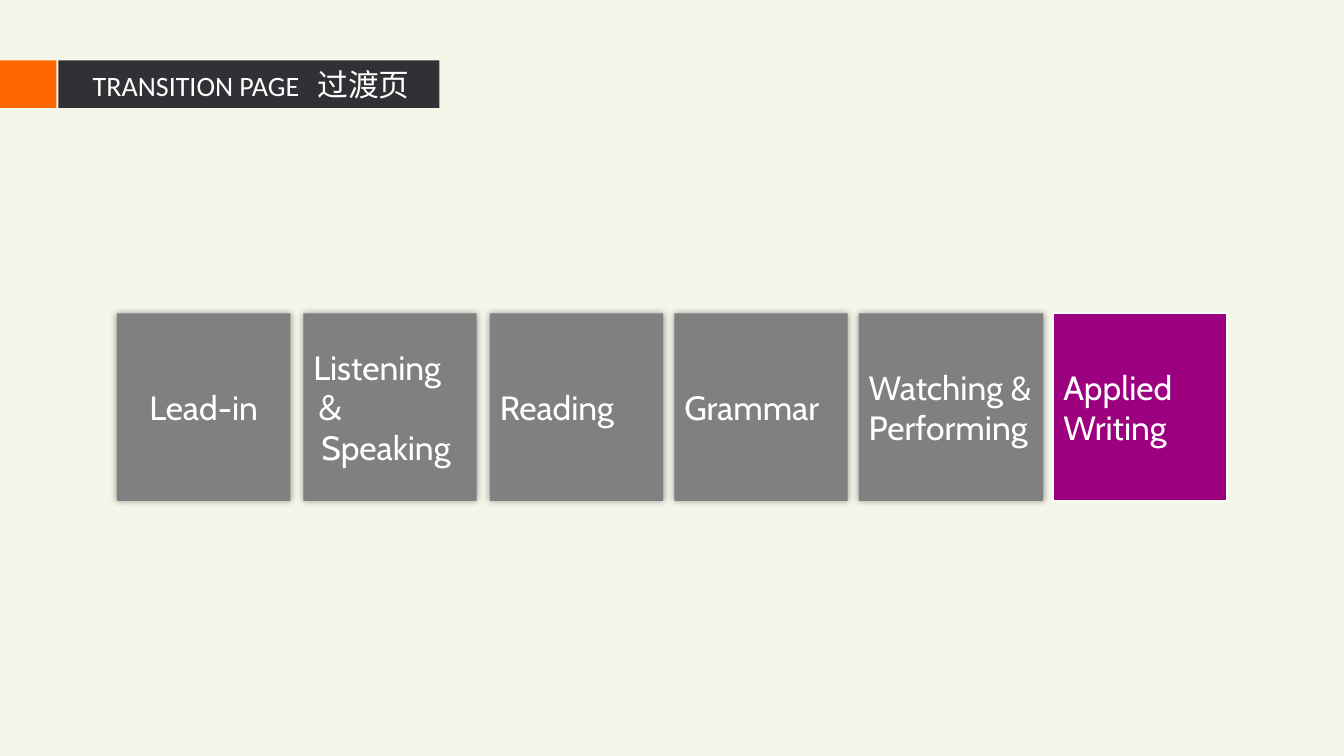
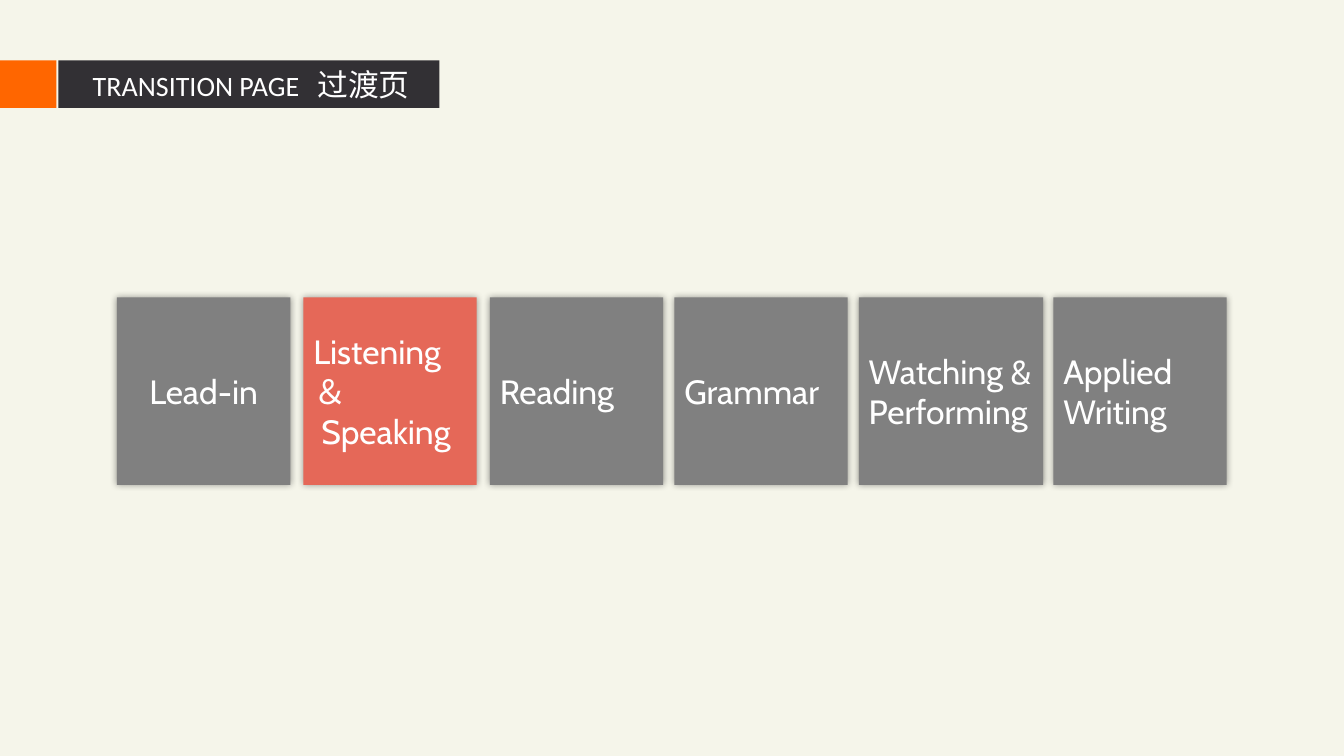
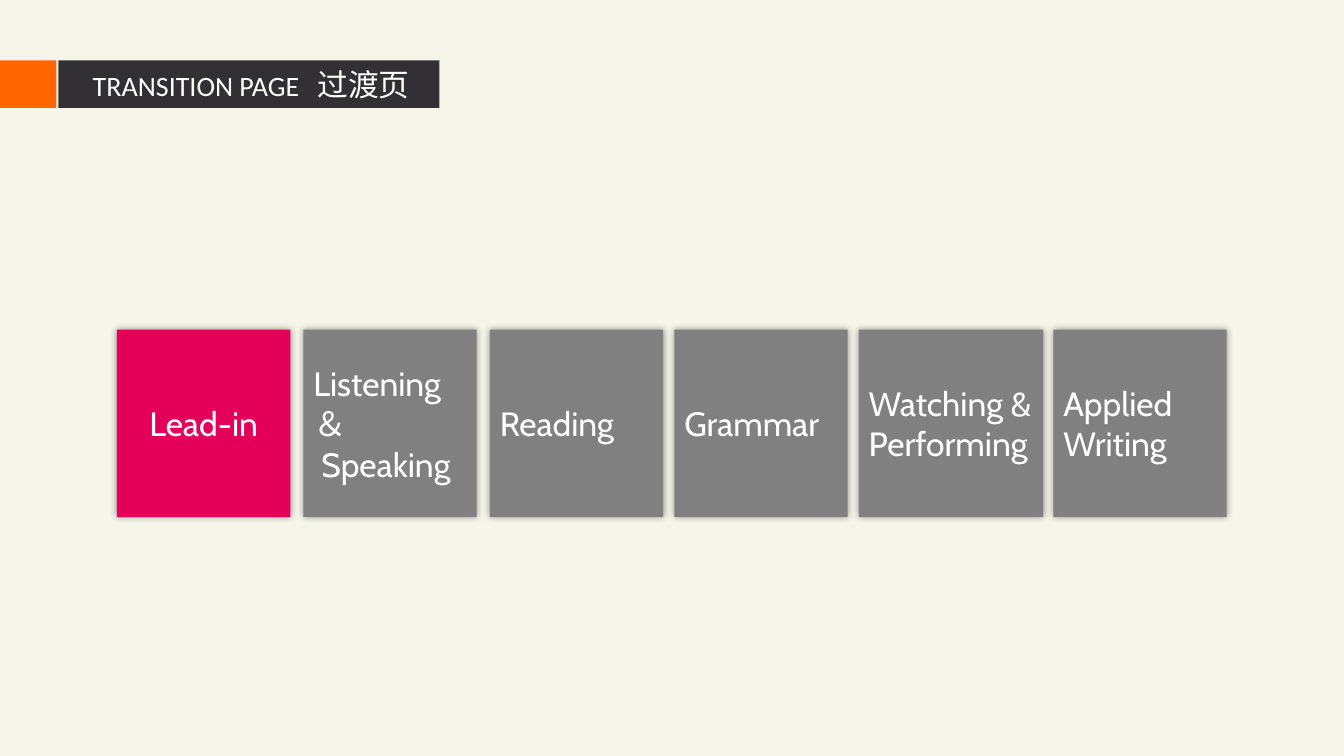
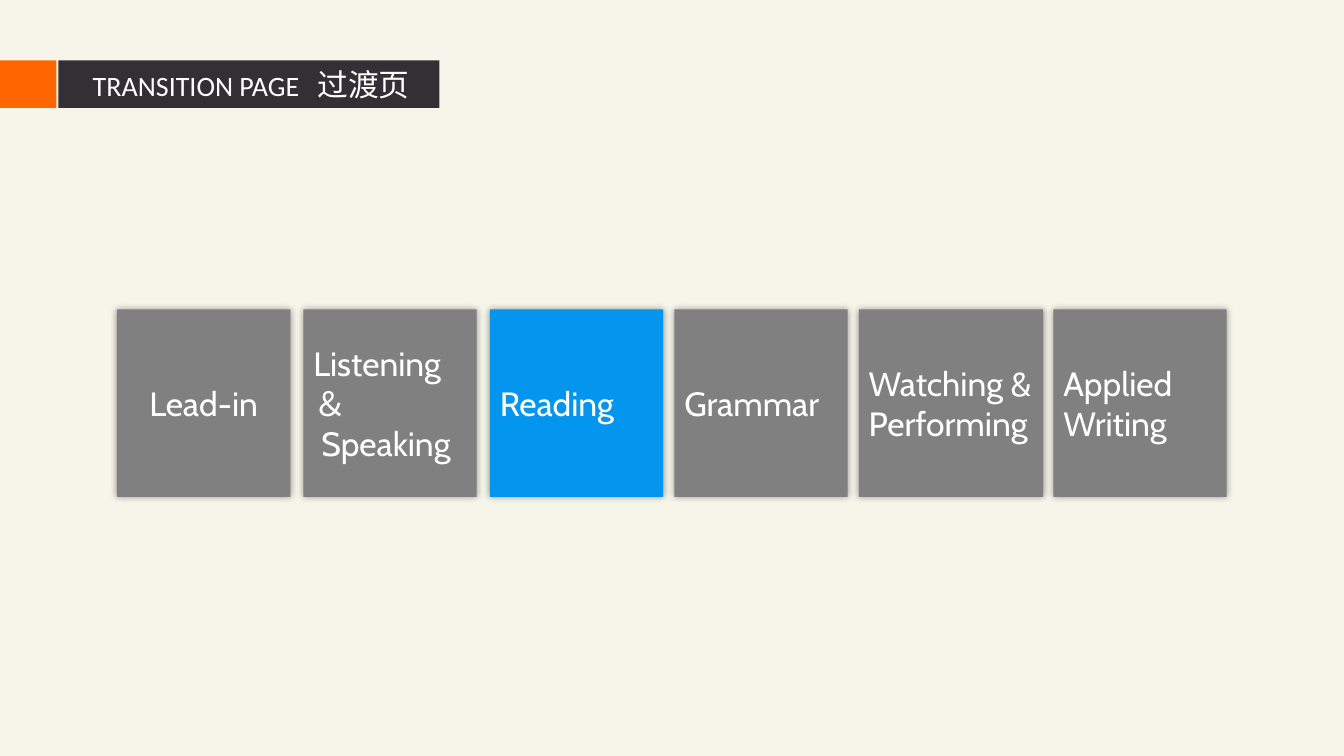
from dataclasses import dataclass
from itertools import accumulate

from lxml import etree
from pptx import Presentation
from pptx.dml.color import RGBColor
from pptx.enum import shapes, text
from pptx.oxml import ns
from pptx.util import Inches, Pt


@dataclass(frozen=True)
class Theme:
    background: str = "F5F5EA"
    band: str = "323034"
    marker: str = "FF6600"
    inactive: str = "808080"
    light: str = "FFFFFF"
    shadow: str = "000000"
    tile_font: str = "Cabin"
    latin_font: str = "Calibri"
    chinese_font: str = "Noto Sans CJK SC"
    tile_size: int = 24
    title_size: int = 20
    chinese_size: int = 22


@dataclass(frozen=True)
class Section:
    lines: tuple
    step: float  # columns to the left edge of the next tile
    width: float = 10.32
    centered: bool = False


# The slide is a grid of 80 columns by 45 rows
COLUMNS, ROWS = 80, 45
CELL = Inches(7.5) / ROWS

SECTIONS = (
    Section(("Lead-in",), 11.1, centered=True),
    Section(("Listening ＆", "Speaking"), 11.1),
    Section(("Reading",), 10.98),
    Section(("Grammar",), 10.98),
    Section(("Watching & Performing",), 11.58, width=10.98),
    Section(("Applied Writing",), 0),
)
FIRST_COLUMN = 6.96
TILE_ROWS = 11.16

# Highlighted section, its colour, top row of the tiles, whether it is outlined
PAGES = (
    (5, "9C007F", 18.66, True),
    (1, "E56858", 17.7, False),
    (0, "E40059", 19.62, False),
    (2, "0495EE", 18.42, False),
)


def cells(count):
    return round(count * CELL)


def add_element(parent, tag, **attributes):
    return etree.SubElement(parent, ns.qn(tag), attributes)


class Deck:
    def __init__(self, theme):
        self.theme = theme
        self.presentation = Presentation()
        self.presentation.slide_width = cells(COLUMNS)
        self.presentation.slide_height = cells(ROWS)
        fill = self.presentation.slide_master.background.fill
        fill.solid()
        fill.fore_color.rgb = RGBColor.from_string(theme.background)
        self.slide = None

    def new_slide(self):
        self.slide = self.presentation.slides.add_slide(
            self.presentation.slide_layouts[6])

    def style_font(self, font, name, size):
        font.name = name
        font.size = Pt(size)
        font.color.rgb = RGBColor.from_string(self.theme.light)
        add_element(font._element, "a:ea", typeface=name)

    def rectangle(self, column, row, width, height, color):
        shape = self.slide.shapes.add_shape(
            shapes.MSO_SHAPE.RECTANGLE,
            cells(column), cells(row), cells(width), cells(height))
        shape.fill.solid()
        shape.fill.fore_color.rgb = RGBColor.from_string(color)
        shape.line.fill.background()
        shape.shadow.inherit = False
        return shape

    def soft_shadow(self, shape):
        effects = shape._element.spPr.find(ns.qn("a:effectLst"))
        shadow = add_element(effects, "a:outerShdw", blurRad=str(Pt(5)),
                             dist="0", dir="0", algn="ctr", rotWithShape="0")
        color = add_element(shadow, "a:srgbClr", val=self.theme.shadow)
        add_element(color, "a:alpha", val="40000")

    def header(self):
        theme = self.theme
        band = self.rectangle(3.48, 3.6, 22.68, 2.82, theme.band)
        self.rectangle(0, 3.6, 3.36, 2.82, theme.marker)
        frame = band.text_frame
        frame.margin_left = Inches(0.34)
        frame.margin_right = 0
        paragraph = frame.paragraphs[0]
        paragraph.alignment = text.PP_ALIGN.LEFT
        # A tab stop holds the gap between the two languages
        tabs = add_element(paragraph._p.get_or_add_pPr(), "a:tabLst")
        add_element(tabs, "a:tab", pos=str(Inches(2.23)), algn="l")
        for wording, name, size in (
                ("TRANSITION PAGE\t", theme.latin_font, theme.title_size),
                ("过渡页", theme.chinese_font, theme.chinese_size)):
            run = paragraph.add_run()
            run.text = wording
            self.style_font(run.font, name, size)

    def tile(self, section, column, row, color, outlined):
        theme = self.theme
        shape = self.rectangle(column, row, section.width, TILE_ROWS, color)
        if outlined:
            shape.line.color.rgb = RGBColor.from_string(theme.light)
            shape.line.width = Pt(1.5)
        else:
            self.soft_shadow(shape)
        frame = shape.text_frame
        frame.word_wrap = True
        for index, line in enumerate(section.lines):
            paragraph = frame.add_paragraph() if index else frame.paragraphs[0]
            paragraph.alignment = (text.PP_ALIGN.CENTER if section.centered
                                   else text.PP_ALIGN.LEFT)
            if index:
                paragraph._p.get_or_add_pPr().set("marL", str(Inches(0.08)))
            self.style_font(paragraph.font, theme.tile_font, theme.tile_size)
            # The full-width ampersand takes the second font
            words, ampersand, _ = line.partition("＆")
            paragraph.add_run().text = words
            if ampersand:
                run = paragraph.add_run()
                run.text = ampersand
                self.style_font(run.font, theme.latin_font, theme.tile_size)

    def tile_row(self, active, accent, row, outlined):
        steps = [section.step for section in SECTIONS[:-1]]
        columns = accumulate(steps, initial=FIRST_COLUMN)
        for index, (section, column) in enumerate(zip(SECTIONS, columns)):
            is_active = index == active
            color = accent if is_active else self.theme.inactive
            self.tile(section, column, row, color, is_active and outlined)


def main():
    deck = Deck(Theme())
    for page in PAGES:
        deck.new_slide()
        deck.header()
        deck.tile_row(*page)
    deck.presentation.save("out.pptx")


if __name__ == "__main__":
    main()
